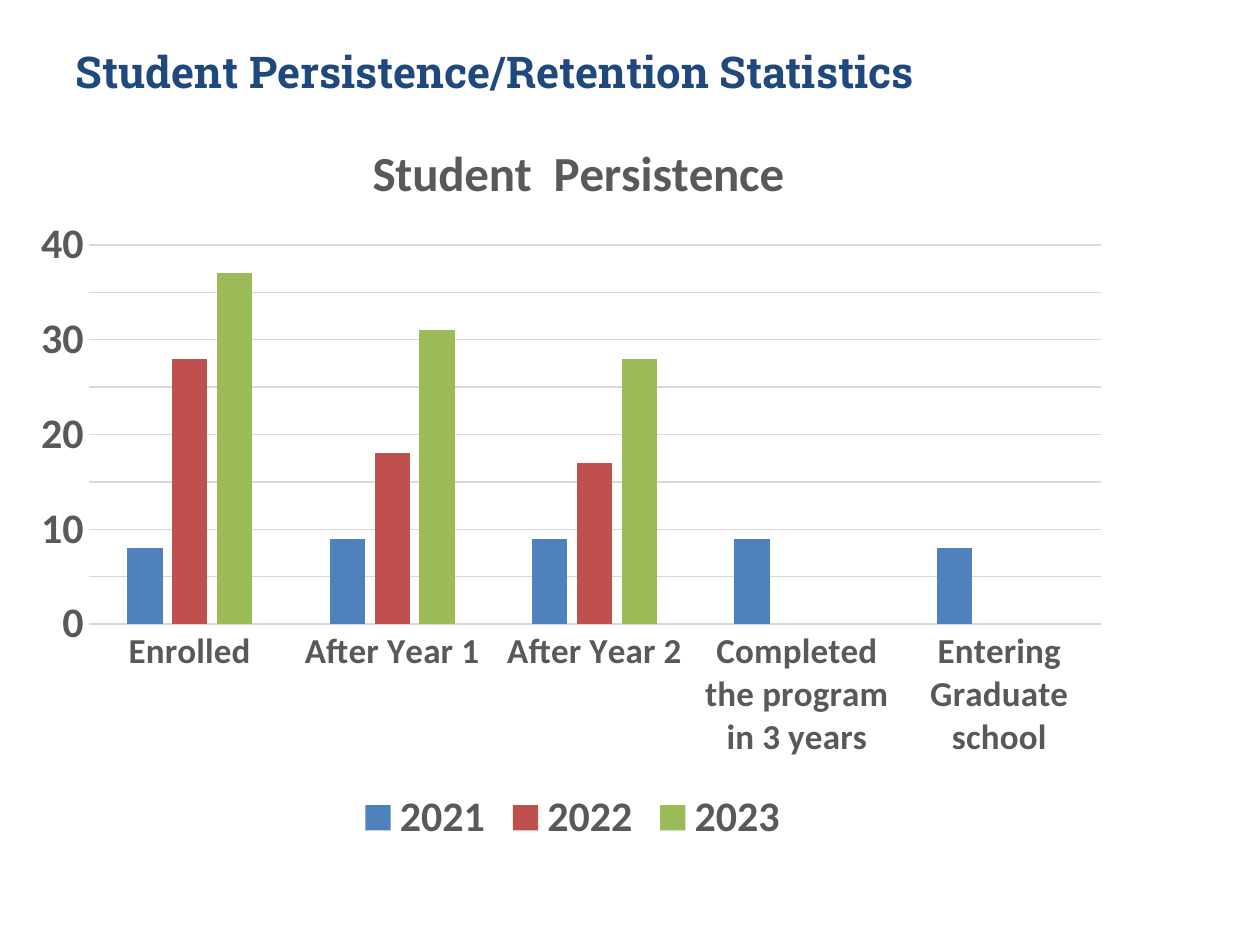
from copy import deepcopy

from lxml import etree
from pptx import Presentation
from pptx.chart.data import CategoryChartData
from pptx.dml.color import RGBColor
from pptx.enum.chart import XL_CHART_TYPE, XL_LEGEND_POSITION, XL_TICK_MARK
from pptx.enum.text import MSO_ANCHOR, PP_ALIGN
from pptx.oxml.ns import qn
from pptx.util import Inches, Pt

CLUSTERED = XL_CHART_TYPE.COLUMN_CLUSTERED
LEGEND_BOTTOM = XL_LEGEND_POSITION.BOTTOM
NO_TICK = XL_TICK_MARK.NONE
MIDDLE = MSO_ANCHOR.MIDDLE
LEFT = PP_ALIGN.LEFT

COLORS = {
    "heading": "1F497D",
    "label": "595959",
    "grid": "D9D9D9",
    "2021": "4F81BD",
    "2022": "C0504D",
    "2023": "9BBB59",
}
STAGES = [
    "Enrolled",
    "After Year 1",
    "After Year 2",
    "Completed the program in 3 years",
    "Entering Graduate school",
]
COHORTS = {
    "2021": [8, 9, 9, 9, 8],
    "2022": [28, 18, 17, None, None],
    "2023": [37, 31, 28, None, None],
}


def rgb(name):
    return RGBColor.from_string(COLORS[name])


def place(parent, **fractions):
    """Fix a chart part's position, in fractions of the chart area."""
    layout = parent.find(qn("c:layout"))
    if layout is None:
        layout = etree.Element(qn("c:layout"))
        text = parent.find(qn("c:tx"))
        parent.insert(0 if text is None else parent.index(text) + 1, layout)
    for child in list(layout):
        layout.remove(child)
    manual = etree.SubElement(layout, qn("c:manualLayout"))
    if "w" in fractions:
        etree.SubElement(manual, qn("c:layoutTarget")).set("val", "inner")
    for mode in ("xMode", "yMode"):
        etree.SubElement(manual, qn(f"c:{mode}")).set("val", "edge")
    for key, value in fractions.items():
        etree.SubElement(manual, qn(f"c:{key}")).set("val", str(value))


class SlideBuilder:
    heading_font = "Roboto Slab"
    chart_font = "Calibri"

    def __init__(self, slide):
        self.slide = slide

    def style(self, font, name, size, color):
        font.name = name
        font.size = Pt(size)
        font.bold = True
        font.color.rgb = rgb(color)

    def grid_line(self, line):
        line.color.rgb = rgb("grid")
        line.width = Pt(0.75)

    def title(self, text, left, top, width, height):
        title = self.slide.shapes.title
        title.left, title.top = Inches(left), Inches(top)
        title.width, title.height = Inches(width), Inches(height)
        frame = title.text_frame
        frame.text = text
        frame.vertical_anchor = MIDDLE
        heading = frame.paragraphs[0]
        heading.alignment = LEFT
        self.style(heading.font, self.heading_font, 25, "heading")

    def column_chart(self, caption, stages, cohorts, left, top, width, height):
        data = CategoryChartData()
        data.categories = stages
        for year, counts in cohorts.items():
            data.add_series(year, counts)
        chart = self.slide.shapes.add_chart(
            CLUSTERED, Inches(left), Inches(top), Inches(width), Inches(height), data
        ).chart
        self.style(chart.font, self.chart_font, 24, "label")

        chart.has_title = True
        chart.chart_title.include_in_layout = False
        chart_caption = chart.chart_title.text_frame
        chart_caption.text = caption
        self.style(chart_caption.paragraphs[0].font, self.chart_font, 28, "label")

        chart.has_legend = True
        chart.legend.position = LEGEND_BOTTOM
        chart.legend.include_in_layout = False
        self.style(chart.legend.font, self.chart_font, 24, "label")

        plot = chart.plots[0]
        plot.gap_width = 219
        plot.overlap = -27
        plot.vary_by_categories = False
        for series in plot.series:
            series.format.fill.solid()
            series.format.fill.fore_color.rgb = rgb(series.name)

        self.axes(chart)
        return chart

    def axes(self, chart):
        stage_axis, count_axis = chart.category_axis, chart.value_axis
        for axis, size in ((stage_axis, 20), (count_axis, 24)):
            axis.major_tick_mark = axis.minor_tick_mark = NO_TICK
            self.style(axis.tick_labels.font, self.chart_font, size, "label")
        self.grid_line(stage_axis.format.line)

        count_axis.minimum_scale, count_axis.maximum_scale = 0, 40
        count_axis.major_unit, count_axis.minor_unit = 10, 5
        count_axis.format.line.fill.background()
        count_axis.has_minor_gridlines = True
        self.grid_line(count_axis.major_gridlines.format.line)
        # Minor gridlines have no public format, so they share the major style.
        axis_xml = count_axis._element
        major_style = axis_xml.find(qn("c:majorGridlines")).find(qn("c:spPr"))
        axis_xml.find(qn("c:minorGridlines")).append(deepcopy(major_style))


def main():
    prs = Presentation()
    prs.slide_width, prs.slide_height = Inches(10), Inches(7.5)
    title_only = prs.slide_layouts[5]
    builder = SlideBuilder(prs.slides.add_slide(title_only))

    builder.title("Student Persistence/Retention Statistics", 0.5, 0.3, 9, 0.52)
    chart = builder.column_chart(
        "Student  Persistence", STAGES, COHORTS, 0.18, 0.74, 8.73, 6.02
    )
    place(chart.chart_title._element, x=0.31, y=0.05)
    place(chart.plots[0]._element.getparent(), x=0.06, y=0.2, w=0.92, h=0.5)

    prs.save("out.pptx")


if __name__ == "__main__":
    main()
